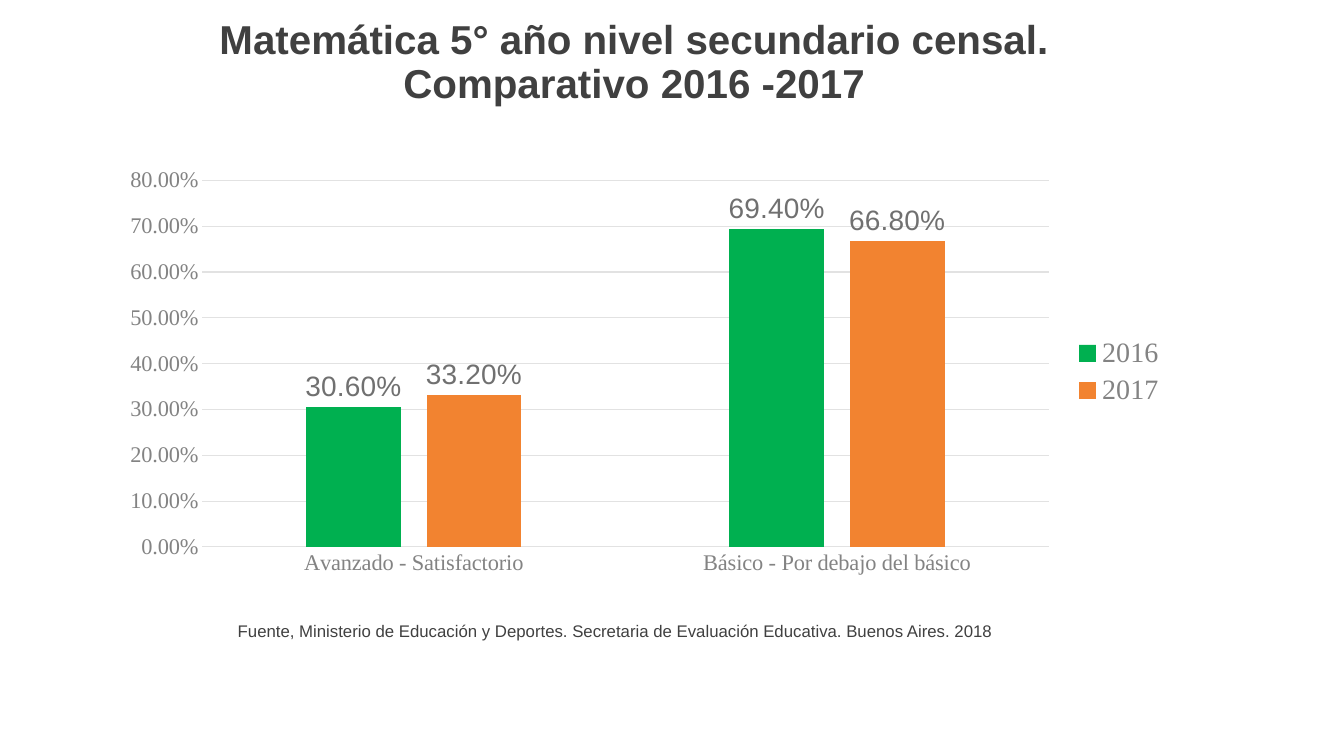
from pptx import Presentation
from pptx.chart.data import CategoryChartData
from pptx.dml.color import RGBColor
from pptx.enum.chart import (XL_CHART_TYPE, XL_LABEL_POSITION,
                             XL_LEGEND_POSITION, XL_TICK_MARK)
from pptx.enum.text import MSO_ANCHOR, PP_ALIGN
from pptx.util import Pt

DARK, GREY, LABEL, GRID = "404040", "838383", "707070", "E2E2E2"
GREEN, ORANGE = "00B050", "F28330"
SANS, SERIF = "Arial", "Times New Roman"
PERCENT = "0.00%"


def rgb(value):
    return RGBColor.from_string(value)


def set_attrs(obj, values):
    for name, value in values.items():
        setattr(obj, name, value)


def set_font(font, size, name, color, bold=False):
    set_attrs(font, {"size": Pt(size), "name": name, "bold": bold})
    font.color.rgb = rgb(color)


def set_line(line, color):
    line.color.rgb = rgb(color)
    line.width = Pt(0.75)


class SlideBuilder:
    def __init__(self, slide):
        self.s = slide

    def text(self, box, text, size, bold=False, frame=None, para=None):
        """Add a text box; frame and para hold extra format values."""
        sp = self.s.shapes.add_textbox(*map(Pt, box))
        tf = sp.text_frame
        set_attrs(tf, {"word_wrap": True, **(frame or {})})
        p = tf.paragraphs[0]
        set_attrs(p, para or {})
        r = p.add_run()
        r.text = text
        set_font(r.font, size, SANS, DARK, bold)

    def column_chart(self, box, categories, series):
        """Add clustered columns; series maps a name to (values, color)."""
        data = CategoryChartData(number_format=PERCENT)
        data.categories = categories
        for name, (values, _) in series.items():
            data.add_series(name, values)
        chart = self.s.shapes.add_chart(
            XL_CHART_TYPE.COLUMN_CLUSTERED, *map(Pt, box), data).chart
        set_font(chart.font, 10, SANS, DARK)
        set_attrs(chart, {"has_title": False, "has_legend": True})
        set_attrs(chart.legend, {"position": XL_LEGEND_POSITION.RIGHT,
                                 "include_in_layout": False})
        set_font(chart.legend.font, 20, SERIF, GREY)

        for axis in (chart.category_axis, chart.value_axis):
            set_attrs(axis, {"major_tick_mark": XL_TICK_MARK.NONE,
                             "minor_tick_mark": XL_TICK_MARK.NONE})
            set_font(axis.tick_labels.font, 16, SERIF, GREY)
        set_line(chart.category_axis.format.line, GRID)
        value_axis = chart.value_axis
        set_attrs(value_axis, {"minimum_scale": 0, "maximum_scale": 0.8,
                               "major_unit": 0.1})
        value_axis.format.line.fill.background()
        set_line(value_axis.major_gridlines.format.line, GRID)
        number_format = {"number_format": PERCENT,
                         "number_format_is_linked": False}
        set_attrs(value_axis.tick_labels, number_format)

        plot = chart.plots[0]
        set_attrs(plot, {"gap_width": 219, "overlap": -27,
                         "vary_by_categories": False})
        for ser, (_, color) in zip(plot.series, series.values()):
            ser.format.fill.solid()
            ser.format.fill.fore_color.rgb = rgb(color)
            labels = ser.data_labels
            set_attrs(labels, {"show_value": True, **number_format,
                               "position": XL_LABEL_POSITION.OUTSIDE_END})
            set_font(labels.font, 20, SANS, LABEL)


def main():
    prs = Presentation()
    set_attrs(prs, {"slide_width": Pt(960), "slide_height": Pt(540)})
    b = SlideBuilder(prs.slides.add_slide(prs.slide_layouts[6]))
    b.text((66, 28.8, 774, 85),
           "Matemática 5° año nivel secundario censal. Comparativo 2016 -2017",
           28.8, True,
           {"vertical_anchor": MSO_ANCHOR.BOTTOM, "margin_bottom": Pt(37.5)},
           {"alignment": PP_ALIGN.CENTER, "line_spacing": 0.9})
    b.column_chart((77.8, 113.8, 762.5, 303.8),
                   ["Avanzado - Satisfactorio",
                    "Básico - Por debajo del básico"],
                   {"2016": ((0.306, 0.694), GREEN),
                    "2017": ((0.332, 0.668), ORANGE)})
    b.text((162.7, 440, 572.4, 21.6),
           "Fuente, Ministerio de Educación y Deportes. Secretaria de "
           "Evaluación Educativa. Buenos Aires. 2018", 12)
    prs.save("out.pptx")


if __name__ == "__main__":
    main()
